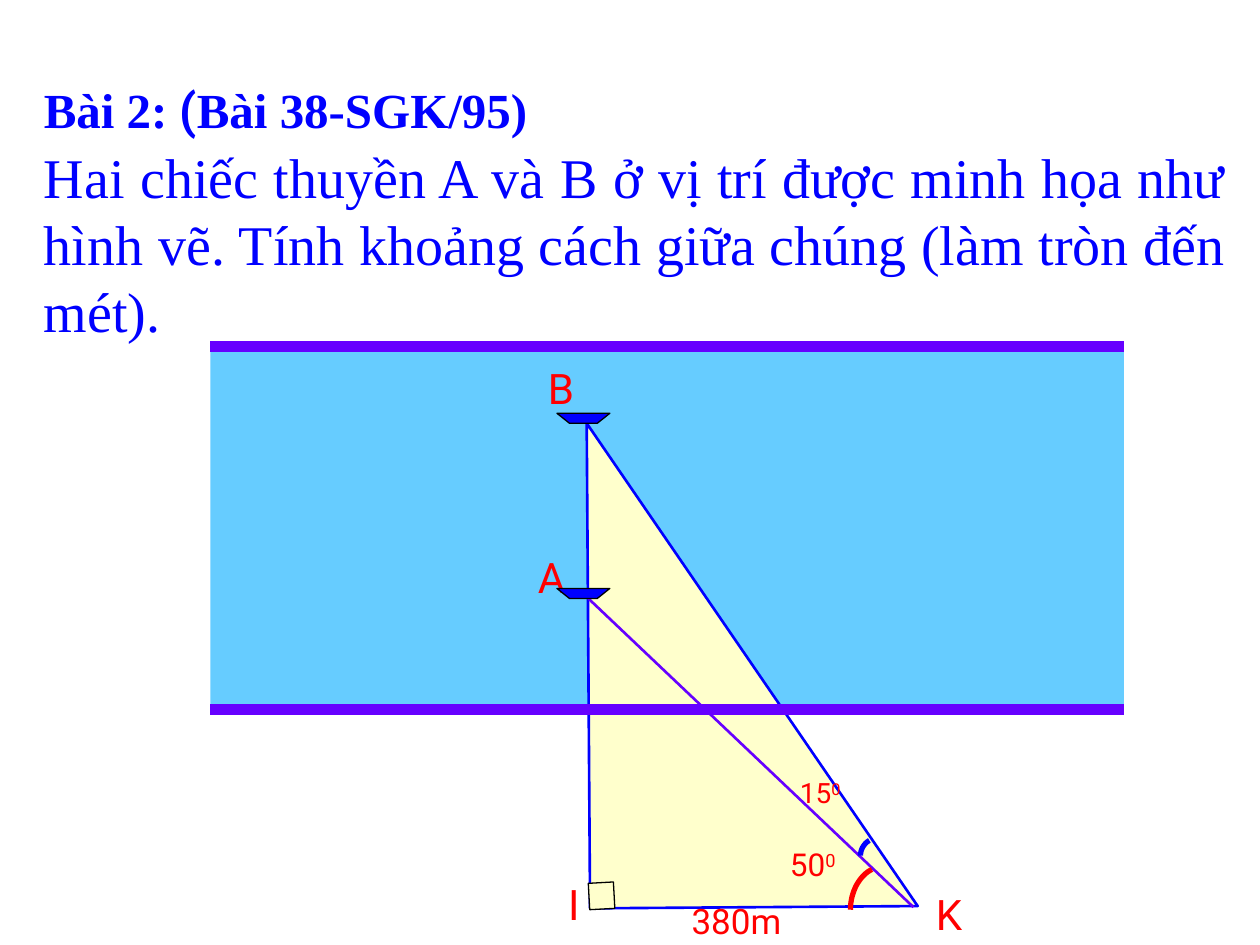
import pptx
import pptx.util
import pptx.dml.color
import pptx.enum.shapes
import pptx.enum.text
import pptx.oxml.ns
from lxml import etree

Inches = pptx.util.Inches
Pt = pptx.util.Pt
RGBColor = pptx.dml.color.RGBColor
Preset = pptx.enum.shapes.MSO_SHAPE
Align = pptx.enum.text.PP_ALIGN

BLUE = RGBColor(0x00, 0x00, 0xFF)
RED = RGBColor(0xFF, 0x00, 0x00)
PURPLE = RGBColor(0x66, 0x00, 0xFF)
WATER = RGBColor(0x66, 0xCC, 0xFF)
CREAM = RGBColor(0xFF, 0xFF, 0xCC)
BLACK = RGBColor(0x00, 0x00, 0x00)
SERIF = "Times New Roman"
SANS = "Roboto"


def add_span(para, text, size=24, font=SANS, color=RED, bold=False, raised=False):
    span = para.add_run()
    span.text = text
    span.font.size = Pt(size)
    span.font.name = font
    span.font.color.rgb = color
    span.font.bold = bold
    if raised:
        span._r.get_or_add_rPr().set("baseline", "30000")


def curve_points(start, first, second, end, steps=16):
    """Sample a cubic Bezier curve."""
    points = []
    for step in range(steps + 1):
        t = step / steps
        weights = ((1 - t) ** 3, 3 * t * (1 - t) ** 2, 3 * t * t * (1 - t), t ** 3)
        points.append(tuple(
            sum(weight * value for weight, value in zip(weights, values))
            for values in zip(start, first, second, end)))
    return points


class Sketch:
    def __init__(self, slide):
        self.slide = slide

    def finish(self, shape, fill, line, width):
        shape.shadow.inherit = False
        if fill is None:
            shape.fill.background()
        else:
            shape.fill.solid()
            shape.fill.fore_color.rgb = fill
        if line is None:
            shape.line.fill.background()
        else:
            shape.line.color.rgb = line
            shape.line.width = Pt(width)

    def shape(self, preset, place, fill, line=None, width=0.75, rotation=0):
        shape = self.slide.shapes.add_shape(preset, *map(Inches, place))
        shape.rotation = rotation
        self.finish(shape, fill, line, width)

    def outline(self, points, fill=None, line=BLACK, width=0.75, close=False):
        corners = [(Inches(x), Inches(y)) for x, y in points]
        builder = self.slide.shapes.build_freeform(*corners[0])
        builder.add_line_segments(corners[1:], close=close)
        self.finish(builder.convert_to_shape(), fill, line, width)

    def line(self, start, end, color, width):
        line = self.slide.shapes.add_connector(
            pptx.enum.shapes.MSO_CONNECTOR.STRAIGHT, *map(Inches, start + end))
        line.line.color.rgb = color
        line.line.width = Pt(width)
        etree.SubElement(line._element.spPr, pptx.oxml.ns.qn("a:effectLst"))

    def text(self, place, *spans, align=Align.LEFT):
        """Each span is a pair: its text and its format."""
        box = self.slide.shapes.add_textbox(*map(Inches, place))
        frame = box.text_frame
        frame.word_wrap = True
        frame.auto_size = pptx.enum.text.MSO_AUTO_SIZE.SHAPE_TO_FIT_TEXT
        para = frame.paragraphs[0]
        para.alignment = align
        for text, style in spans:
            add_span(para, text, **style)

    def point_label(self, name, left, top):
        self.text((left, top, 0.58, 0.5), (name, {}))

    def angle_label(self, degrees, place, size):
        self.text(place, (degrees, {"size": size}), ("0", {"size": size, "raised": True}))

    def boat(self, top, left=4.42, width=0.42, height=0.08, slant=0.1):
        right, bottom = left + width, top + height
        self.outline([(left, top), (left + slant, bottom),
                      (right - slant, bottom), (right, top)], BLUE, close=True)

    def bank(self, y):
        self.line((1.67, y), (8.92, y), PURPLE, 6)


def main():
    deck = pptx.Presentation()
    deck.slide_width, deck.slide_height = Inches(10), Inches(7.5)
    page = Sketch(deck.slides.add_slide(deck.slide_layouts[6]))

    heading = {"size": 28, "color": BLUE, "bold": True}
    page.text((0.25, 0.58, 4.5, 0.57),
              ("Bài 2:", {**heading, "font": SERIF}),
              (" (", heading),
              ("Bài 38-SGK/95)", {**heading, "font": SERIF}))
    page.text((0.25, 1.08, 9.58, 1.72),
              ("Hai chiếc thuyền A và B ở vị trí được minh họa như hình vẽ. "
               "Tính khoảng cách giữa chúng (làm tròn đến mét).",
               {"size": 32, "font": SERIF, "color": BLUE}),
              align=Align.JUSTIFY)

    page.shape(Preset.RECTANGLE, (1.67, 2.75, 7.25, 2.92), WATER)
    page.point_label("B", 4.25, 2.83)
    page.point_label("K", 7.33, 7)
    page.shape(Preset.RIGHT_TRIANGLE, (4.67, 3.35, 2.6, 3.85), CREAM, BLUE, 1.5, 359.6)
    page.shape(Preset.RECTANGLE, (4.67, 7.01, 0.21, 0.2), CREAM, BLACK, rotation=266.9)
    page.line((4.67, 4.75), (7.25, 7.2), PURPLE, 1.5)
    page.point_label("I", 4.41, 6.92)
    page.point_label("A", 4.17, 4.33)

    for top in (3.28, 4.67):
        page.boat(top)
    for y in (2.75, 5.63):
        page.bank(y)

    page.angle_label("50", (6.17, 6.66, 0.95, 0.4), 18)
    page.angle_label("15", (6.25, 6.11, 0.58, 0.37), 16)
    page.text((5.39, 7.09, 1.42, 0.44), ("380m", {"size": 20}))
    page.outline(curve_points((6.92, 6.9), (6.82, 6.95), (6.75, 7.08), (6.75, 7.22)),
                 line=RED, width=3)
    page.outline(curve_points((6.9, 6.67), (6.85, 6.7), (6.83, 6.75), (6.83, 6.79)),
                 line=BLUE, width=3)

    deck.save("out.pptx")


if __name__ == "__main__":
    main()
